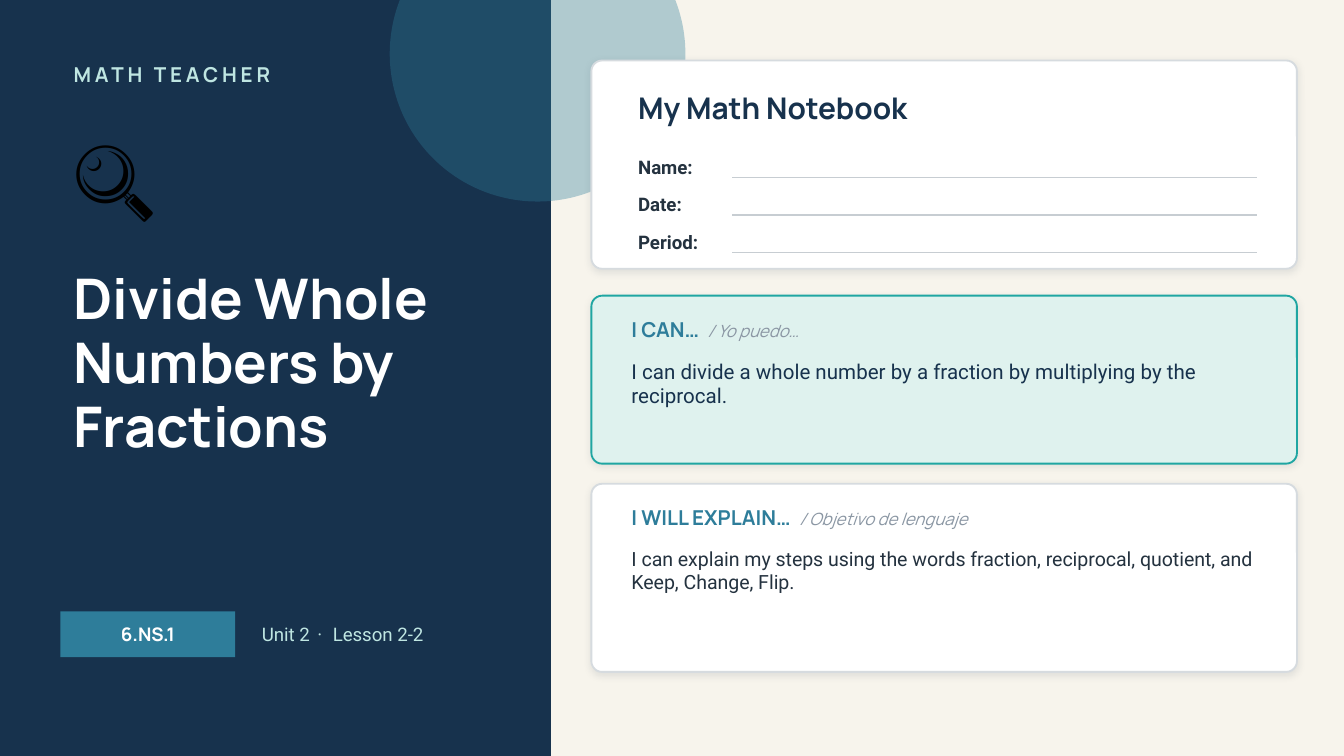
from lxml import etree
from pptx import Presentation
from pptx.dml.color import RGBColor
from pptx.enum.shapes import MSO_CONNECTOR, MSO_SHAPE
from pptx.enum.text import MSO_ANCHOR, PP_ALIGN
from pptx.oxml import parse_xml
from pptx.oxml.ns import nsdecls, qn
from pptx.util import Inches, Pt

PAGE_WIDTH = 10
PAGE_HEIGHT = PAGE_WIDTH * 9 / 16
NAVY, BLUE, MINT, INK = "17324D", "2E7D9A", "BFE6E2", "24323F"
WHITE, GREY = "FFFFFF", "8A96A3"
CARD_SHADOW = (
    f'<a:effectLst {nsdecls("a")}>'
    '<a:outerShdw blurRad="50800" dist="12700" dir="5400000" algn="bl" rotWithShape="0">'
    '<a:srgbClr val="1C2E42"><a:alpha val="10000"/></a:srgbClr>'
    '</a:outerShdw></a:effectLst>'
)


def add_block(kind, left, top, width, height, fill, line=None):
    block = page.shapes.add_shape(
        kind, Inches(left), Inches(top), Inches(width), Inches(height))
    block.shadow.inherit = False
    block.fill.solid()
    block.fill.fore_color.rgb = RGBColor.from_string(fill)
    if line:
        block.line.color.rgb = RGBColor.from_string(line)
        block.line.width = Pt(1)
    else:
        block.line.fill.background()
    return block


def add_text(spans, left, top, width, height, anchor=MSO_ANCHOR.MIDDLE):
    """Each span is (text, font, size, colour, bold, italic, letter spacing in points)."""
    box = page.shapes.add_textbox(
        Inches(left), Inches(top), Inches(width), Inches(height))
    box.text_frame.word_wrap = True
    box.text_frame.vertical_anchor = anchor
    paragraph = box.text_frame.paragraphs[0]
    for text, name, size, colour, bold, italic, spacing in spans:
        span = paragraph.add_run()
        span.text = text
        span.font.name = name
        span.font.size = Pt(size)
        span.font.bold = bold
        span.font.italic = italic
        span.font.color.rgb = RGBColor.from_string(colour)
        if spacing:
            span.font._element.set("spc", str(int(spacing * 100)))
    return paragraph


deck = Presentation()
deck.slide_width, deck.slide_height = Inches(PAGE_WIDTH), Inches(PAGE_HEIGHT)
page = deck.slides.add_slide(deck.slide_layouts[6])
page.background.fill.solid()
page.background.fill.fore_color.rgb = RGBColor.from_string("F7F4EC")

# Cover panel
add_block(MSO_SHAPE.RECTANGLE, 0, 0, 4.1, PAGE_HEIGHT, NAVY)
circle = add_block(MSO_SHAPE.OVAL, 2.9, -0.7, 2.2, 2.2, BLUE)
circle_colour = circle._element.spPr.find(qn("a:solidFill"))[0]
etree.SubElement(circle_colour, qn("a:alpha")).set("val", "35000")

add_text([("MATH TEACHER", "Manrope", 11, MINT, True, False, 2)], 0.45, 0.4, 3.3, 0.3)
add_text([("🔍", "Calibri", 44, "000000", False, False, 0)], 0.45, 0.85, 1.5, 0.9)
title = add_text([("Divide Whole Numbers by Fractions", "Manrope", 30, WHITE, True, False, 0)],
                 0.45, 1.95, 3.3, 1.7, MSO_ANCHOR.TOP)
title.line_spacing = 0.95

badge = add_block(MSO_SHAPE.RECTANGLE, 0.45, 4.55, 1.3, 0.34, BLUE)
badge.text_frame.vertical_anchor = MSO_ANCHOR.MIDDLE
standard = badge.text_frame.paragraphs[0]
standard.text = "6.NS.1"
standard.alignment = PP_ALIGN.CENTER
standard.font.name = "Manrope"
standard.font.size = Pt(10)
standard.font.bold = True
standard.font.color.rgb = RGBColor.from_string(WHITE)
add_text([("Unit 2", "Roboto", 10, MINT, False, False, 0),
          (" · ", "Roboto", 10, MINT, False, False, 1.6),
          ("Lesson 2-2", "Roboto", 10, MINT, False, False, 0)], 1.85, 4.55, 2.1, 0.34)

# Cards
for top, height, fill, line in [
    (0.45, 1.55, WHITE, "D6DBDF"),
    (2.2, 1.25, "DFF2EE", "1FA6A2"),
    (3.6, 1.4, WHITE, "D6DBDF"),
]:
    card = add_block(MSO_SHAPE.ROUNDED_RECTANGLE, 4.4, top, 5.25, height, fill, line)
    card.adjustments[0] = 0.08 / height
    properties = card._element.spPr
    properties.replace(properties.find(qn("a:effectLst")), parse_xml(CARD_SHADOW))

# Notebook fields
add_text([("My Math Notebook", "Manrope", 16, NAVY, True, False, 0)], 4.65, 0.6, 4.8, 0.4)
for index, label in enumerate(["Name:", "Date:", "Period:"]):
    top = 1.12 + 0.28 * index
    add_text([(label, "Roboto", 10, INK, True, False, 0)], 4.65, top, 0.8, 0.24)
    rule = page.shapes.add_connector(
        MSO_CONNECTOR.STRAIGHT,
        Inches(5.45), Inches(top + 0.2), Inches(9.35), Inches(top + 0.2))
    rule.line.color.rgb = RGBColor.from_string("C7CDD2")
    rule.line.width = Pt(0.75)
    etree.SubElement(rule._element.spPr, qn("a:effectLst"))

# Learning goals
for top, height, heading, hint, goal, size, colour in [
    (2.3, 0.78, "I CAN…", "/ Yo puedo…",
     "I can divide a whole number by a fraction by multiplying by the reciprocal.", 11, NAVY),
    (3.7, 0.92, "I WILL EXPLAIN…", "/ Objetivo de lenguaje",
     "I can explain my steps using the words fraction, reciprocal, quotient, "
     "and Keep, Change, Flip.", 10.5, INK),
]:
    add_text([(heading, "Manrope", 11, BLUE, True, False, 0),
              (" ", "Manrope", 11, BLUE, True, False, 2.2),
              (hint, "Manrope", 9, GREY, False, True, 0)], 4.6, top, 4.85, 0.3)
    add_text([(goal, "Roboto", size, colour, False, False, 0)],
             4.6, top + 0.32, 4.85, height, MSO_ANCHOR.TOP)

deck.save("out.pptx")
